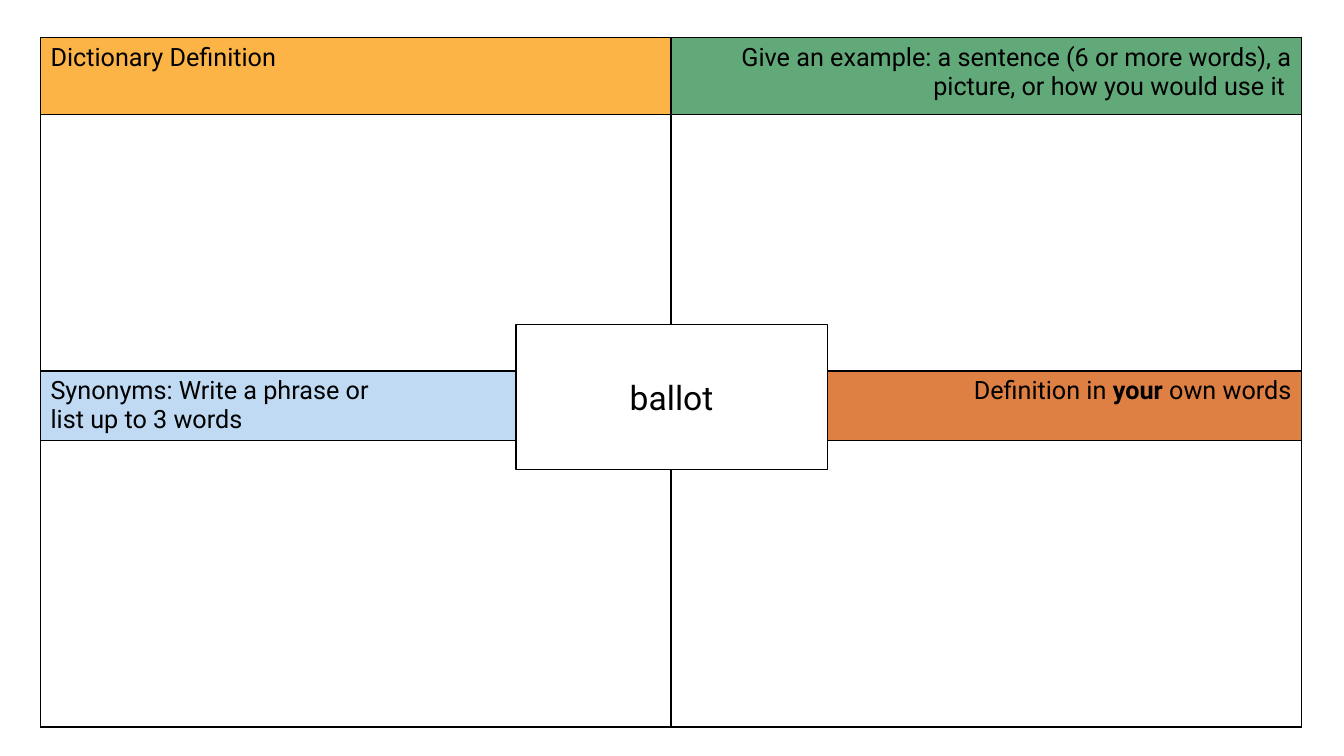
from lxml import etree
from pptx import Presentation
from pptx import util as u
from pptx.dml.color import RGBColor
from pptx.enum import shapes, text
from pptx.oxml import ns

COLORS = {
    "black": "000000",
    "white": "FFFFFF",
    "definition": "FCB447",
    "example": "62A97A",
    "synonyms": "BFDAF2",
    "own words": "DE8043",
}
FONT = "Roboto"


def style_paragraph(para, size, align):
    para.alignment = align
    para.font.name = FONT
    para.font.size = u.Pt(size)
    para.font.color.rgb = RGBColor.from_string(COLORS["black"])


def add_borders(cell):
    properties = cell._tc.get_or_add_tcPr()
    for side in ("lnL", "lnR", "lnT", "lnB"):
        line = etree.SubElement(properties, ns.qn(f"a:{side}"), w=str(u.Pt(1)))
        fill = etree.SubElement(line, ns.qn("a:solidFill"))
        etree.SubElement(fill, ns.qn("a:srgbClr"), val=COLORS["black"])


deck = Presentation()
deck.slide_width = u.Cm(33.87)
deck.slide_height = u.Cm(19.05)
page = deck.slides.add_slide(deck.slide_layouts[6])

# Four-square grid: heading rows alternate with empty answer rows
row_heights = [1.94, 6.46, 1.75, 7.22]
column_width = 15.89
grid = page.shapes.add_table(
    4, 2, u.Cm(1.02), u.Cm(0.95), u.Cm(2 * column_width), u.Cm(sum(row_heights))
).table
for row, height in zip(grid.rows, row_heights):
    row.height = u.Cm(height)
for column in grid.columns:
    column.width = u.Cm(column_width)

# Headings: each paragraph is a list of (text, bold) runs
headings = {
    (0, 0): ("definition", [[("Dictionary Definition", False)]]),
    (0, 1): ("example", [[("Give an example: a sentence (6 or more words), "
                           "a picture, or how you would use it ", False)]]),
    (2, 0): ("synonyms", [[("Synonyms: Write a phrase or", False)],
                          [("list up to 3 words ", False)]]),
    (2, 1): ("own words", [[("Definition in ", False), ("your ", True),
                            ("own words", False)]]),
}
column_aligns = [text.PP_ALIGN.LEFT, text.PP_ALIGN.RIGHT]

for row in range(4):
    for column, align in enumerate(column_aligns):
        cell = grid.cell(row, column)
        color, paragraphs = headings.get((row, column), ("white", []))
        add_borders(cell)
        cell.fill.solid()
        cell.fill.fore_color.rgb = RGBColor.from_string(COLORS[color])
        for index, spans in enumerate(paragraphs):
            frame = cell.text_frame
            para = frame.add_paragraph() if index else frame.paragraphs[0]
            style_paragraph(para, 18, align)
            for words, bold in spans:
                span = para.add_run()
                span.text = words
                span.font.bold = bold

# Vocabulary word in the centre
box = page.shapes.add_shape(
    shapes.MSO_SHAPE.RECTANGLE, u.Cm(13), u.Cm(8.18), u.Cm(7.85), u.Cm(3.66)
)
box.shadow.inherit = False
box.fill.solid()
box.fill.fore_color.rgb = RGBColor.from_string(COLORS["white"])
box.line.color.rgb = RGBColor.from_string(COLORS["black"])
box.line.width = u.Pt(1)
box.text_frame.vertical_anchor = text.MSO_ANCHOR.MIDDLE
word = box.text_frame.paragraphs[0]
word.text = "ballot"
style_paragraph(word, 24, text.PP_ALIGN.CENTER)

deck.save("out.pptx")
